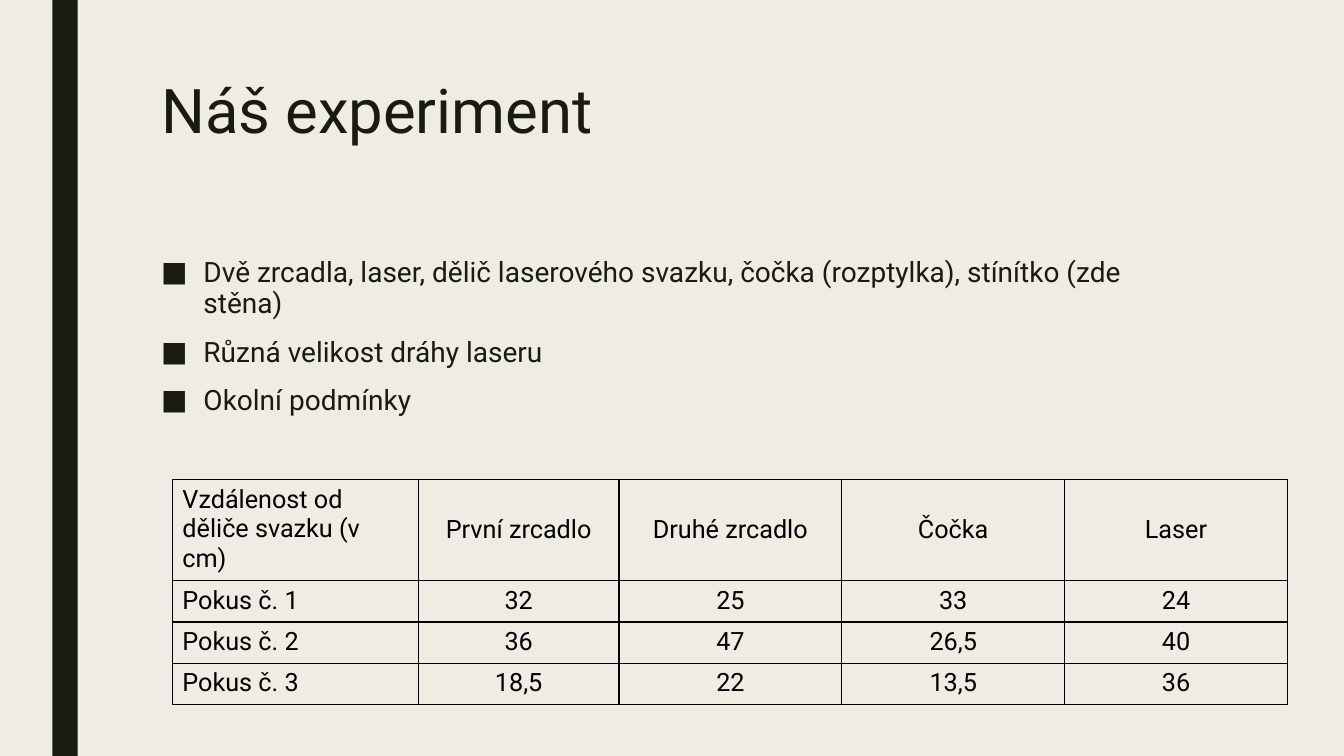
from lxml import etree
from pptx import Presentation, util as u
from pptx.dml.color import RGBColor
from pptx.enum import shapes, text
from pptx.oxml import ns

FONT, DARK, BLACK, PAPER = "Roboto", "191B0E", "000000", "EFEDE3"
UNIT = 0.25
HEADER = ["Vzdálenost od děliče svazku (v cm)", "První zrcadlo", "Druhé zrcadlo", "Čočka", "Laser"]
TRIALS = [
    ["32", "25", "33", "24"],
    ["36", "47", "26,5", "40"],
    ["18,5", "22", "13,5", "36"],
]
BULLETS = [
    "Dvě zrcadla, laser, dělič laserového svazku, čočka (rozptylka), stínítko (zde stěna)",
    "Různá velikost dráhy laseru",
    "Okolní podmínky",
]


def grid(*cells):
    """Turn counts of quarter-inch grid cells into lengths."""
    return [u.Inches(n * UNIT) for n in cells]


def color(hex_value):
    """Return the colour for a hex string."""
    return RGBColor.from_string(hex_value)


def sub(parent, tag, **attrs):
    """Append a DrawingML child element."""
    return etree.SubElement(parent, ns.qn(tag), attrs)


def write(p, words, size=18, fill=BLACK, align=None, spacing=None, before=None, after=None):
    """Put formatted text in a paragraph."""
    r = p.add_run()
    r.text = words
    r.font.name, r.font.size = FONT, u.Pt(size)
    r.font.color.rgb = color(fill)
    p.alignment, p.line_spacing = align, spacing
    if before is not None:
        p.space_before, p.space_after = u.Pt(before), u.Pt(after)


def add_bullet(p, indent=0.42):
    """Give a paragraph a square bullet with a hanging indent."""
    pPr = p._p.get_or_add_pPr()
    pPr.set("marL", str(u.Inches(indent)))
    pPr.set("indent", str(-u.Inches(indent)))
    sub(pPr, "a:buFont", typeface=FONT)
    sub(pPr, "a:buChar", char="■")


def add_bar(s, *cells):
    """Draw a plain vertical bar."""
    sp = s.shapes.add_shape(shapes.MSO_SHAPE.RECTANGLE, *grid(*cells))
    sp.shadow.inherit = False
    sp.fill.solid()
    sp.fill.fore_color.rgb = color(DARK)
    sp.line.fill.background()


def add_text(s, cells, lines, bulleted=False, **fmt):
    """Add a wrapping text box with one paragraph per line."""
    tf = s.shapes.add_textbox(*grid(*cells)).text_frame
    tf.word_wrap = True
    for i, line in enumerate(lines):
        p = tf.add_paragraph() if i else tf.paragraphs[0]
        write(p, line, fill=DARK, **fmt)
        if bulleted:
            add_bullet(p)


def add_borders(cell):
    """Rule all four sides of a table cell."""
    tcPr = cell._tc.get_or_add_tcPr()
    for side in "LRTB":
        ln = sub(tcPr, f"a:ln{side}", w=str(u.Pt(1)))
        sub(sub(ln, "a:solidFill"), "a:srgbClr", val=BLACK)


def add_table(s, left, top, widths, heights, rows):
    """Add a ruled table with its first column left-aligned."""
    box = grid(left, top, sum(widths), sum(heights))
    table = s.shapes.add_table(len(rows), len(widths), *box).table
    table.first_row = table.horz_banding = False
    for column, width in zip(table.columns, grid(*widths)):
        column.width = width
    for row, height in zip(table.rows, grid(*heights)):
        row.height = height
    for i, row in enumerate(rows):
        for j, words in enumerate(row):
            cell = table.cell(i, j)
            add_borders(cell)
            cell.fill.background()
            if i == 0 and j:
                cell.vertical_anchor = text.MSO_ANCHOR.MIDDLE
            write(cell.text_frame.paragraphs[0], words,
                  align=text.PP_ALIGN.CENTER if j else None)


def main():
    """Build the slide and save it."""
    prs = Presentation()
    prs.slide_width, prs.slide_height = u.Inches(13.33), u.Inches(7.5)
    s = prs.slides.add_slide(prs.slide_layouts[6])
    s.background.fill.solid()
    s.background.fill.fore_color.rgb = color(PAPER)
    add_bar(s, 2.08, 0, 1, 30)
    add_text(s, (6, 3, 42, 6.5), ["Náš experiment"], size=44, spacing=0.89)
    add_text(s, (6, 10, 42, 15.7), BULLETS, bulleted=True,
             size=20, spacing=0.94, before=10, after=2)
    rows = [HEADER] + [[f"Pokus č. {n}", *values] for n, values in enumerate(TRIALS, 1)]
    add_table(s, 6.84, 19.04, [9.76, 7.96] + [8.84] * 3, [3.92] + [1.64] * 3, rows)
    prs.save("out.pptx")


if __name__ == "__main__":
    main()
